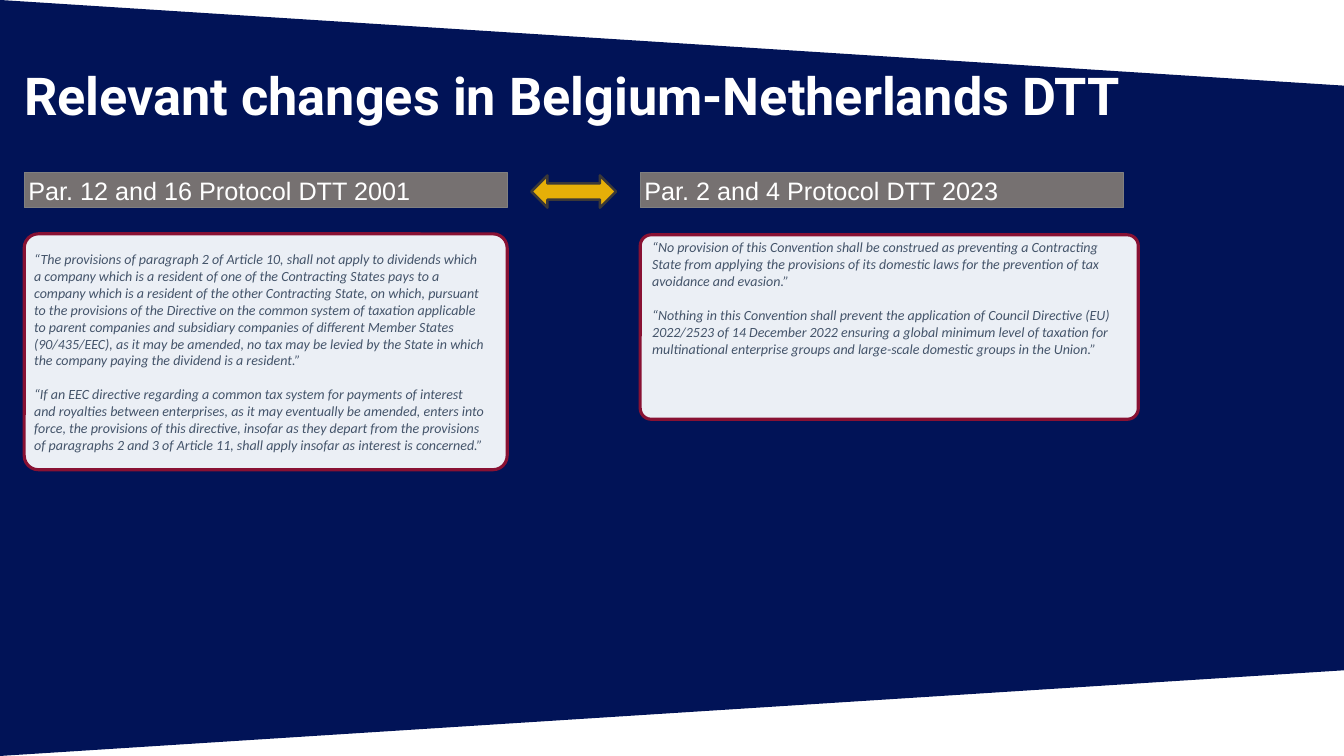
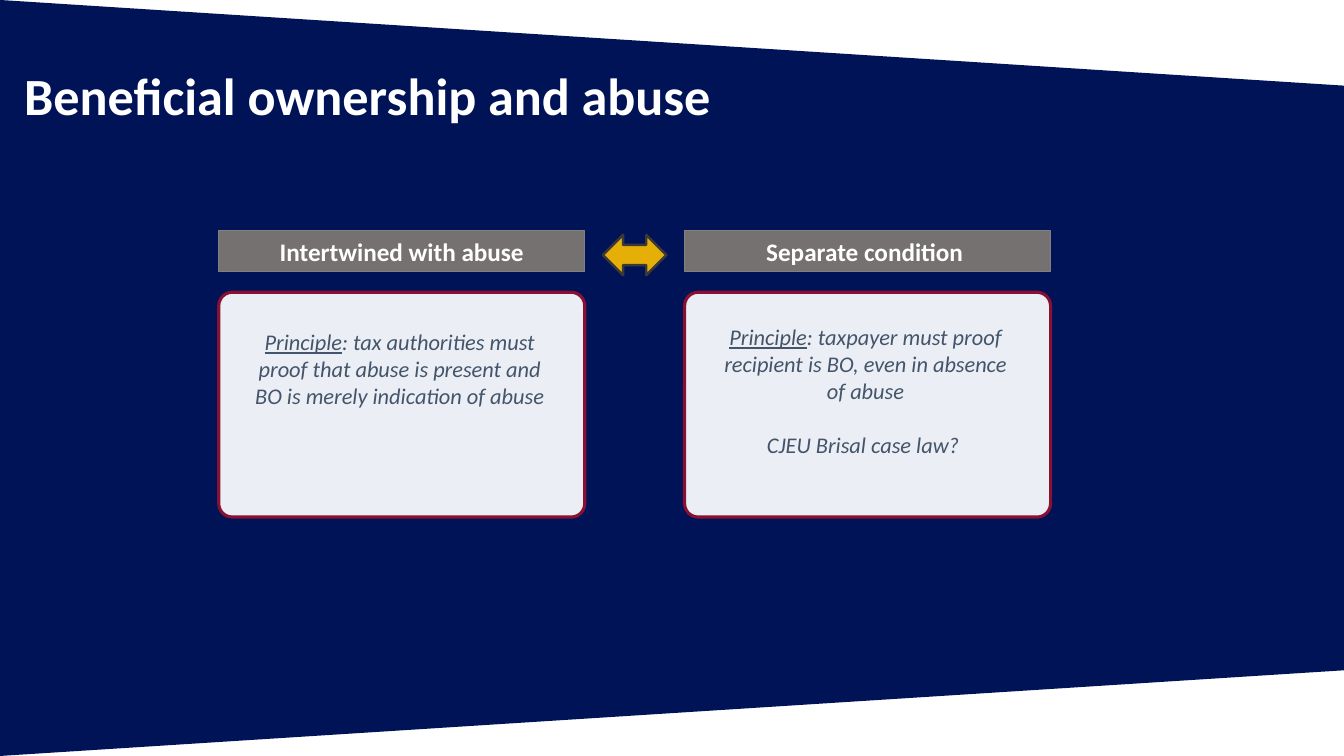
from dataclasses import dataclass

from lxml.etree import SubElement
from pptx import Presentation
from pptx.dml.color import RGBColor
from pptx.enum.shapes import MSO_SHAPE
from pptx.enum.text import MSO_ANCHOR, PP_ALIGN
from pptx.oxml.ns import qn
from pptx.util import Inches, Pt

WIDTH, HEIGHT = 13.33, 7.5


@dataclass(frozen=True)
class Theme:
    navy: str = "011357"
    white: str = "FFFFFF"
    panel: str = "EBEFF5"
    crimson: str = "881133"
    bar: str = "767171"
    bar_line: str = "808080"
    gold: str = "FFC000"
    arrow_line: str = "3B3838"
    body: str = "44546A"
    body_font: str = "Calibri"
    title_size: float = 37.3
    heading_size: float = 18
    quote_size: float = 10
    principle_size: float = 16


class Deck:
    def __init__(self, theme):
        self.theme = theme
        self.prs = Presentation()
        self.prs.slide_width = Inches(WIDTH)
        self.prs.slide_height = Inches(HEIGHT)
        self.s = None

    def add_slide(self, title, font):
        self.s = self.prs.slides.add_slide(self.prs.slide_layouts[6])
        self.backdrop()
        self.title(title, font)

    def paint(self, sp, fill, line=None, weight=0):
        sp.shadow.inherit = False
        sp.fill.solid()
        sp.fill.fore_color.rgb = RGBColor.from_string(fill)
        if line:
            sp.line.color.rgb = RGBColor.from_string(line)
            sp.line.width = Pt(weight)
        else:
            sp.line.fill.background()

    def shape(self, kind, box, fill, line, weight):
        sp = self.s.shapes.add_shape(kind, *map(Inches, box))
        self.paint(sp, fill, line, weight)
        return sp

    def backdrop(self):
        corners = [(WIDTH, 0.85), (WIDTH, 6.65), (0, HEIGHT)]
        builder = self.s.shapes.build_freeform(0, 0)
        builder.add_line_segments([tuple(map(Inches, c)) for c in corners])
        self.paint(builder.convert_to_shape(), self.theme.navy)

    def set_text(self, sp, paragraphs, frame, para, font, color, gap=0):
        tf = sp.text_frame
        for name, value in {"word_wrap": True, **frame}.items():
            setattr(tf, name, value)
        for i, runs in enumerate(paragraphs):
            p = tf.paragraphs[0] if i == 0 else tf.add_paragraph()
            if i:
                p.space_before = Pt(gap)
            for name, value in para.items():
                setattr(p, name, value)
            for text, extra in runs:
                r = p.add_run()
                r.text = text
                for name, value in {**font, **extra}.items():
                    setattr(r.font, name, value)
                r.font.color.rgb = RGBColor.from_string(color)

    def text_box(self, box):
        return self.s.shapes.add_textbox(*map(Inches, box))

    def title(self, text, font):
        margins = dict.fromkeys(
            ("margin_left", "margin_top", "margin_right", "margin_bottom"), 0)
        self.set_text(self.text_box((0.24, 0.6, 12.07, 0.65)), [[(text, {})]],
                      {"vertical_anchor": MSO_ANCHOR.BOTTOM, **margins},
                      {"line_spacing": Pt(40)},
                      {"name": font, "size": Pt(self.theme.title_size), "bold": True},
                      self.theme.white)

    def heading(self, box, text, font, align, bold=False):
        t = self.theme
        sp = self.shape(MSO_SHAPE.RECTANGLE, box, t.bar, t.bar_line, 0.75)
        self.set_text(sp, [[(text, {})]],
                      {"vertical_anchor": MSO_ANCHOR.MIDDLE, "margin_left": Inches(0.04),
                       "margin_right": Inches(0.04), "margin_top": 0, "margin_bottom": 0},
                      {"alignment": align},
                      {"name": font, "size": Pt(t.heading_size), "bold": bold}, t.white)

    def arrow(self, box):
        t = self.theme
        sp = self.shape(MSO_SHAPE.LEFT_RIGHT_ARROW, box, t.gold, t.arrow_line, 1.75)
        color = sp.element.spPr.find(qn("a:solidFill"))[0]
        SubElement(color, qn("a:alpha"), val="90000")

    def card(self, box, text_area, paragraphs, size, align):
        t = self.theme
        sp = self.shape(MSO_SHAPE.ROUNDED_RECTANGLE, box, t.panel, t.crimson, 2.25)
        sp.adjustments[0] = 0.06
        self.set_text(self.text_box(text_area), paragraphs,
                      {"vertical_anchor": MSO_ANCHOR.TOP}, {"alignment": align},
                      {"name": t.body_font, "size": Pt(size), "italic": True},
                      t.body, gap=size * 1.22)


def treaty_slide(deck):
    deck.add_slide("Relevant changes in Belgium-Netherlands DTT", "Roboto")
    columns = [
        (0.24, "Par. 12 and 16 Protocol DTT 2001",
         (0.24, 2.32, 4.79, 2.34), (0.24, 2.44, 4.68, 2.12), [
             "“The provisions of paragraph 2 of Article 10, shall not apply to dividends "
             "which a company which is a resident of one of the Contracting States pays "
             "to a company which is a resident of the other Contracting State, on which, "
             "pursuant to the provisions of the Directive on the common system of taxation "
             "applicable to parent companies and subsidiary companies of different Member "
             "States (90/435/EEC), as it may be amended, no tax may be levied by the State "
             "in which the company paying the dividend is a resident.”",
             "“If an EEC directive regarding a common tax system for payments of interest "
             "and royalties between enterprises, as it may eventually be amended, enters "
             "into force, the provisions of this directive, insofar as they depart from the "
             "provisions of paragraphs 2 and 3 of Article 11, shall apply insofar as "
             "interest is concerned.”"]),
        (6.35, "Par. 2 and 4 Protocol DTT 2023",
         (6.35, 2.33, 4.94, 1.83), (6.37, 2.32, 4.92, 1.72), [
             "“No provision of this Convention shall be construed as preventing a "
             "Contracting State from applying the provisions of its domestic laws for the "
             "prevention of tax avoidance and evasion.”",
             "“Nothing in this Convention shall prevent the application of Council "
             "Directive (EU) 2022/2523 of 14 December 2022 ensuring a global minimum level "
             "of taxation for multinational enterprise groups and large-scale domestic "
             "groups in the Union.”"]),
    ]
    for left, heading, box, text_area, quotes in columns:
        deck.heading((left, 1.71, 4.79, 0.35), heading, "Arial", PP_ALIGN.LEFT)
        deck.card(box, text_area, [[(quote, {})] for quote in quotes],
                  deck.theme.quote_size, PP_ALIGN.LEFT)
    deck.arrow((5.27, 1.74, 0.84, 0.32))


def ownership_slide(deck):
    deck.add_slide("Beneficial ownership and abuse", deck.theme.body_font)
    principle = ("Principle", {"underline": True})
    columns = [
        (2.17, "Intertwined with abuse", 3.21, [
            [principle, (": tax authorities must proof that abuse is present and BO is "
                         "merely indication of abuse", {})]]),
        (6.79, "Separate condition ", 3.16, [
            [principle, (": taxpayer must proof recipient is BO, even in absence of "
                         "abuse", {})],
            [("CJEU Brisal case law? ", {})]]),
    ]
    for left, heading, text_top, paragraphs in columns:
        deck.heading((left, 2.29, 3.63, 0.4), heading, deck.theme.body_font,
                     PP_ALIGN.CENTER, bold=True)
        deck.card((left, 2.9, 3.63, 2.23), (left + 0.21, text_top, 3.17, 1.9),
                  paragraphs, deck.theme.principle_size, PP_ALIGN.CENTER)
    deck.arrow((5.98, 2.33, 0.63, 0.4))


def main():
    deck = Deck(Theme())
    treaty_slide(deck)
    ownership_slide(deck)
    deck.prs.save("out.pptx")


if __name__ == "__main__":
    main()
